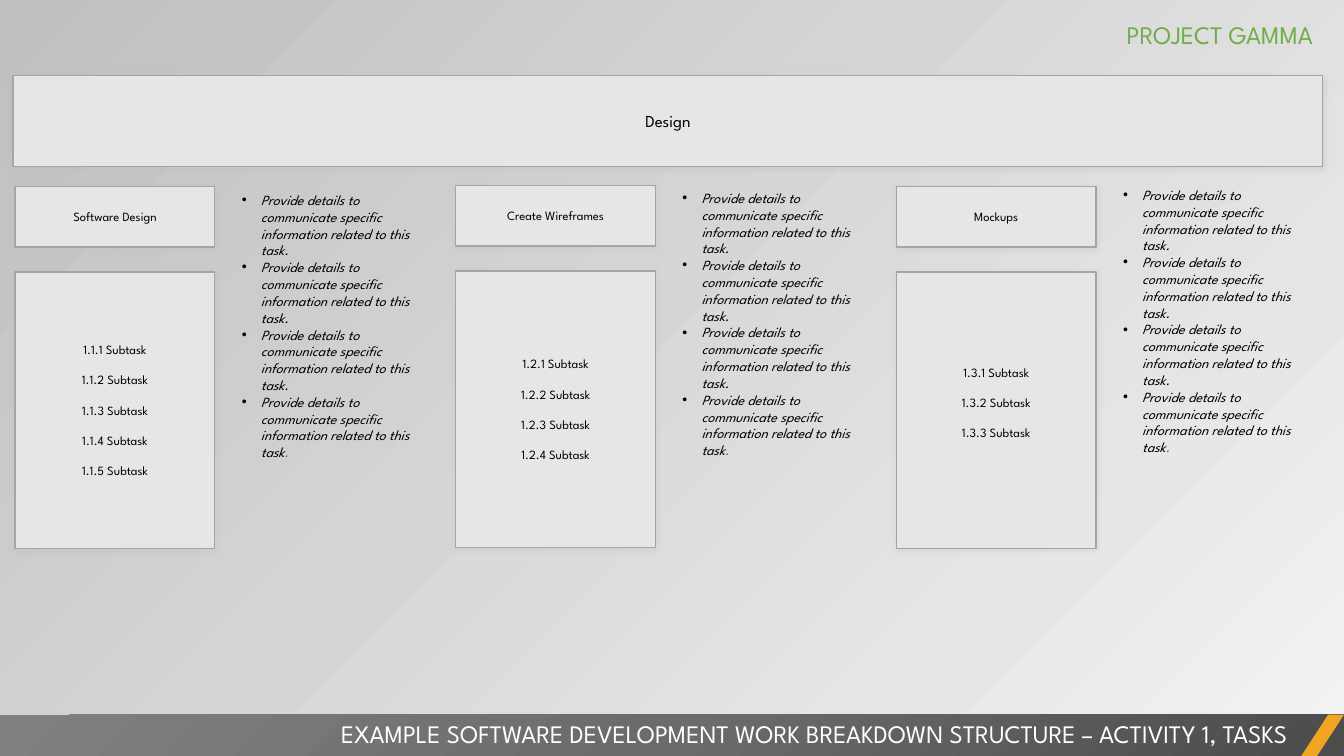
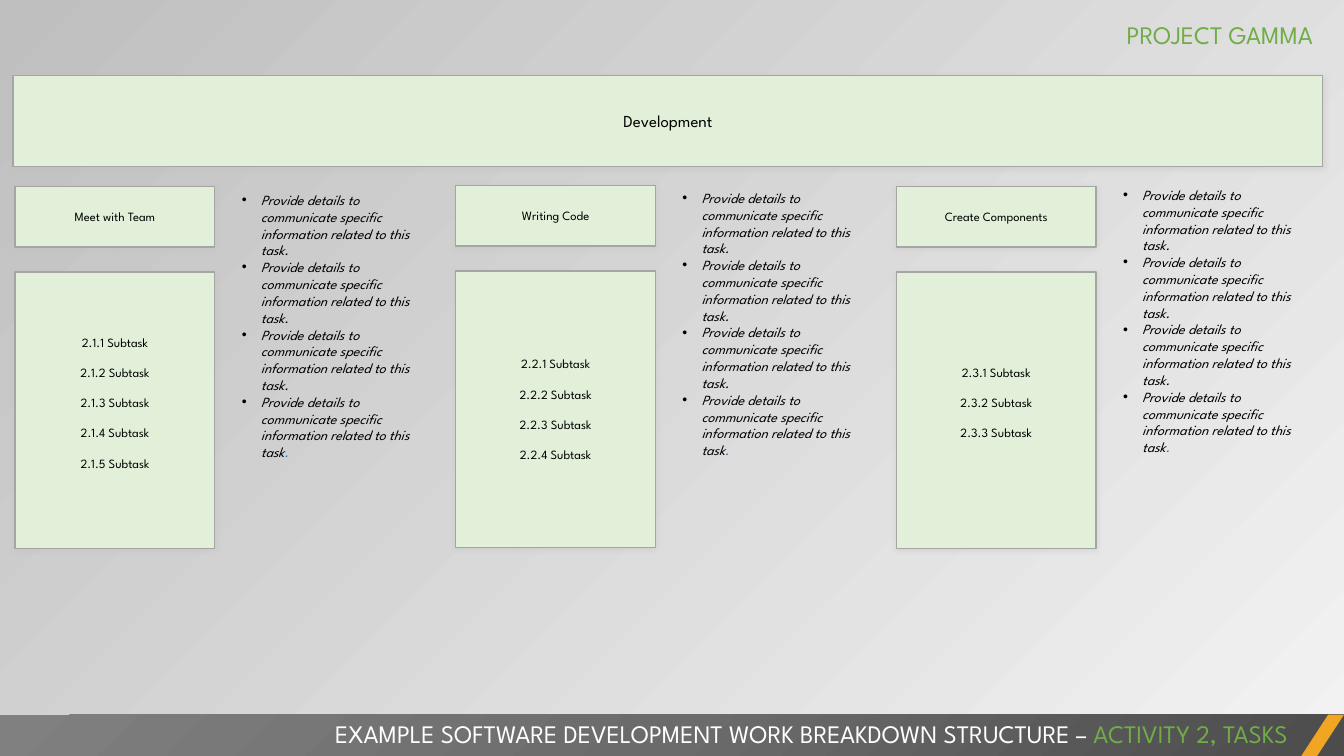
from dataclasses import dataclass

from lxml import etree
from pptx import Presentation
from pptx.dml.color import RGBColor
from pptx.enum import shapes, text
from pptx.oxml import ns
from pptx.util import Inches, Pt

FONT = "League Spartan"
BLACK = RGBColor(0x00, 0x00, 0x00)
WHITE = RGBColor(0xFF, 0xFF, 0xFF)
GREEN = RGBColor(0x70, 0xAD, 0x47)
PALE_GREEN = RGBColor(0xE2, 0xF0, 0xD9)
PALE_GRAY = RGBColor(0xE7, 0xE6, 0xE6)
BORDER_GRAY = RGBColor(0xA5, 0xA5, 0xA5)
SHADOW_GRAY = RGBColor(0xBF, 0xBF, 0xBF)
BACKDROP_LIGHT = RGBColor(0xF2, 0xF2, 0xF2)
BAND_DARK = RGBColor(0x4C, 0x4C, 0x4C)
BAND_MIDDLE = RGBColor(0x6B, 0x6B, 0x6B)
BAND_LIGHT = RGBColor(0x80, 0x80, 0x80)
ORANGE = RGBColor(0xF0, 0xA6, 0x22)
BLUE = RGBColor(0x2E, 0x75, 0xB6)

SLIDE_WIDTH, SLIDE_HEIGHT = 13.33, 7.5
BAND_TOP, BAND_HEIGHT = 7.09, 0.42
COLUMN_LEFT, COLUMN_PITCH = 0.15, 4.37
TASK_WIDTH, TASK_HEIGHT, SUBTASKS_HEIGHT = 1.98, 0.6, 2.74
SUBTASKS_DROP = 0.85
DETAILS_OFFSET, DETAILS_WIDTH, DETAILS_HEIGHT = 2.15, 2.06, 3
TASK_TOPS = (1.85, 1.84, 1.85)
DETAILS_TOPS = (1.85, 1.83, 1.8)
SUBTASK_GAP = Pt(10.8)
INSET = Inches(0.05)
BULLET_INDENT = Inches(0.19)

PROJECT = "PROJECT GAMMA"
TITLE = "EXAMPLE SOFTWARE DEVELOPMENT WORK BREAKDOWN STRUCTURE – "
DETAIL = "Provide details to communicate specific information related to this task"
DETAIL_COUNT = 4


@dataclass(frozen=True)
class Box:
    left: float
    top: float
    width: float
    height: float

    def lengths(self) -> tuple:
        return tuple(Inches(n) for n in (self.left, self.top, self.width, self.height))


@dataclass(frozen=True)
class Task:
    name: str
    subtask_count: int
    raised: bool = False  # subtasks sit half a line above the middle


@dataclass(frozen=True)
class Activity:
    number: int
    name: str
    fill: RGBColor
    label_color: RGBColor
    tasks: tuple[Task, ...]


ACTIVITIES = (
    Activity(1, "Design", PALE_GRAY, WHITE, (
        Task("Software Design", 5),
        Task("Create Wireframes", 4),
        Task("Mockups", 3, raised=True),
    )),
    Activity(2, "Development", PALE_GREEN, GREEN, (
        Task("Meet with Team", 5, raised=True),
        Task("Writing Code", 4),
        Task("Create Components", 3, raised=True),
    )),
)


def add_xml(parent, tag: str, **attributes):
    return etree.SubElement(parent, ns.qn(tag), {k: str(v) for k, v in attributes.items()})


def add_color(parent, color: RGBColor, opacity: int = 100) -> None:
    element = add_xml(parent, "a:srgbClr", val=color)
    if opacity < 100:
        add_xml(element, "a:alpha", val=opacity * 1000)


def swap_solid_for_gradient(owner, stops: list[tuple[int, RGBColor, int]]):
    """Replace the owner's solid fill; stops are (position, colour, opacity)."""
    solid = owner.find(ns.qn("a:solidFill"))
    gradient = etree.Element(ns.qn("a:gradFill"), {"rotWithShape": "1"})
    stop_list = add_xml(gradient, "a:gsLst")
    for position, color, opacity in stops:
        add_color(add_xml(stop_list, "a:gs", pos=position * 1000), color, opacity)
    owner.replace(solid, gradient)
    return gradient


def add_run(paragraph, wording: str, size: float, color: RGBColor, italic: bool = False) -> None:
    run = paragraph.add_run()
    run.text = wording
    run.font.name = FONT
    run.font.size = Pt(size)
    run.font.color.rgb = color
    if italic:
        run.font.italic = True


def paragraph_at(frame, index: int):
    return frame.paragraphs[0] if index == 0 else frame.add_paragraph()


def add_plain_shape(slide, kind, box: Box, fill: RGBColor):
    shape = slide.shapes.add_shape(kind, *box.lengths())
    shape.shadow.inherit = False
    shape.fill.solid()
    shape.fill.fore_color.rgb = fill
    shape.line.fill.background()
    return shape


def add_card(slide, box: Box, fill: RGBColor, lines: list[str], size: float, raised: bool = False) -> None:
    """Bordered, softly shadowed rectangle with centred lines."""
    card = add_plain_shape(slide, shapes.MSO_SHAPE.RECTANGLE, box, fill)
    card.line.color.rgb = BORDER_GRAY
    card.line.width = Pt(1)
    effects = card.element.spPr.find(ns.qn("a:effectLst"))
    shadow = add_xml(effects, "a:outerShdw", blurRad=Pt(4), dist=Pt(1),
                     dir=90 * 60000, algn="t", rotWithShape=0)
    add_color(shadow, SHADOW_GRAY, 40)

    frame = card.text_frame
    frame.word_wrap = True
    frame.vertical_anchor = text.MSO_ANCHOR.MIDDLE
    if raised:
        frame.margin_bottom = INSET + SUBTASK_GAP
    for index, line in enumerate(lines):
        paragraph = paragraph_at(frame, index)
        paragraph.alignment = text.PP_ALIGN.CENTER
        if index:
            paragraph.space_before = SUBTASK_GAP
        add_run(paragraph, line, size, BLACK)


def add_text_frame(slide, box: Box):
    frame = slide.shapes.add_textbox(*box.lengths()).text_frame
    frame.word_wrap = True
    frame.auto_size = text.MSO_AUTO_SIZE.SHAPE_TO_FIT_TEXT
    return frame


def add_heading(slide, box: Box, *parts: tuple[str, RGBColor]) -> None:
    paragraph = add_text_frame(slide, box).paragraphs[0]
    paragraph.alignment = text.PP_ALIGN.RIGHT
    for wording, color in parts:
        add_run(paragraph, wording, 18, color)


def add_details(slide, box: Box) -> None:
    frame = add_text_frame(slide, box)
    for index in range(DETAIL_COUNT):
        paragraph = paragraph_at(frame, index)
        properties = paragraph._p.get_or_add_pPr()
        properties.set("marL", str(BULLET_INDENT))
        properties.set("indent", str(-BULLET_INDENT))
        add_xml(properties, "a:buFont", typeface="Arial")
        add_xml(properties, "a:buChar", char="•")
        if index < DETAIL_COUNT - 1:
            add_run(paragraph, DETAIL + ".", 10, BLACK, italic=True)
        else:
            add_run(paragraph, DETAIL, 10, BLACK, italic=True)
            add_run(paragraph, ".", 10, BLUE, italic=True)


def paint_background(slide) -> None:
    slide.background.fill.solid()
    properties = slide.element.find(".//" + ns.qn("p:bgPr"))
    gradient = swap_solid_for_gradient(
        properties, [(0, BACKDROP_LIGHT, 40), (100, SHADOW_GRAY, 100)])
    add_xml(gradient, "a:lin", ang=225 * 60000, scaled=0)


def add_footer(slide, activity: Activity) -> None:
    band = add_plain_shape(slide, shapes.MSO_SHAPE.RECTANGLE,
                           Box(0, BAND_TOP, SLIDE_WIDTH, BAND_HEIGHT), BAND_MIDDLE)
    gradient = swap_solid_for_gradient(
        band.element.spPr,
        [(0, BAND_DARK, 100), (50, BAND_MIDDLE, 100), (100, BAND_LIGHT, 100)])
    circle = add_xml(gradient, "a:path", path="circle")
    add_xml(circle, "a:fillToRect", l=100000, t=100000)

    accent = add_plain_shape(slide, shapes.MSO_SHAPE.PARALLELOGRAM,
                             Box(12.9, BAND_TOP, 0.43, BAND_HEIGHT), ORANGE)
    accent.adjustments[0] = 0.65
    add_heading(slide, Box(0, 7.08, 12.87, 0.4), (TITLE, WHITE),
                (f"ACTIVITY {activity.number}, TASKS", activity.label_color))


def add_task_column(slide, activity: Activity, index: int) -> None:
    task = activity.tasks[index]
    left = COLUMN_LEFT + index * COLUMN_PITCH
    top = TASK_TOPS[index]
    subtasks = [f"{activity.number}.{index + 1}.{n} Subtask"
                for n in range(1, task.subtask_count + 1)]
    add_card(slide, Box(left, top, TASK_WIDTH, TASK_HEIGHT), activity.fill, [task.name], 9)
    add_card(slide, Box(left, top + SUBTASKS_DROP, TASK_WIDTH, SUBTASKS_HEIGHT),
             activity.fill, subtasks, 9, task.raised)
    add_details(slide, Box(left + DETAILS_OFFSET, DETAILS_TOPS[index],
                           DETAILS_WIDTH, DETAILS_HEIGHT))


def add_activity_slide(presentation, activity: Activity) -> None:
    slide = presentation.slides.add_slide(presentation.slide_layouts[6])
    paint_background(slide)
    add_heading(slide, Box(0.09, 0.14, 13.03, 0.4), (PROJECT, GREEN))
    add_card(slide, Box(0.13, 0.75, 12.99, 0.9), activity.fill, [activity.name], 12)
    for index in range(len(activity.tasks)):
        add_task_column(slide, activity, index)
    add_footer(slide, activity)


def main() -> None:
    presentation = Presentation()
    presentation.slide_width = Inches(SLIDE_WIDTH)
    presentation.slide_height = Inches(SLIDE_HEIGHT)
    for activity in ACTIVITIES:
        add_activity_slide(presentation, activity)
    presentation.save("out.pptx")


if __name__ == "__main__":
    main()
